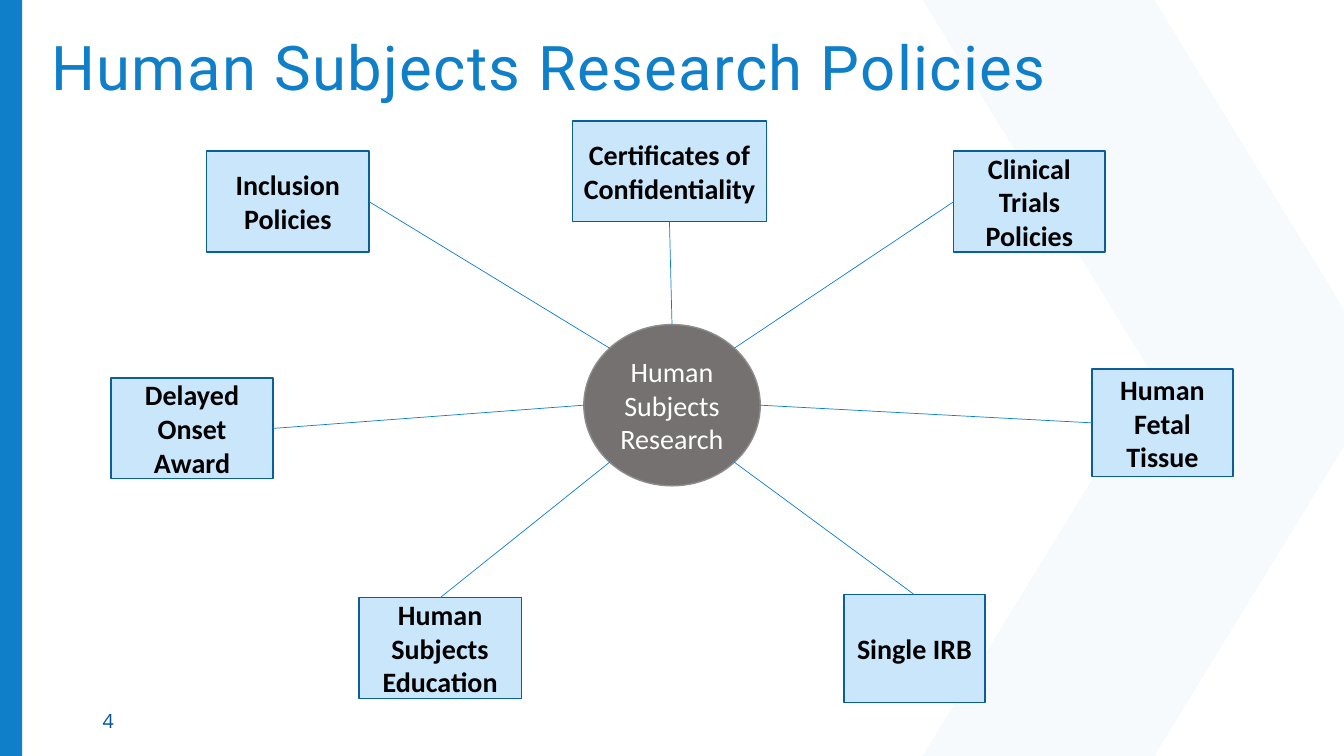
"""Build the Human Subjects Research Policies hub-and-spoke slide."""
from dataclasses import dataclass
from math import cos, pi, sin

from lxml.etree import SubElement
from pptx import Presentation
from pptx.dml.color import RGBColor
from pptx.enum.shapes import MSO_CONNECTOR, MSO_SHAPE
from pptx.enum.text import MSO_ANCHOR, PP_ALIGN
from pptx.oxml.ns import qn
from pptx.util import Inches, Pt


@dataclass(frozen=True)
class Theme:
    accent: str = "0F7FC9"
    spoke: str = "0F7FCD"
    box_fill: str = "C9E6FB"
    box_line: str = "0B5E98"
    hub_fill: str = "767171"
    hub_line: str = "8D8D8D"
    number: str = "015396"
    black: str = "000000"
    white: str = "FFFFFF"
    title_size: int = 44
    body_size: int = 20
    number_size: int = 14


theme = Theme()


def write_text(shape, text, size, font_name, color, bold=False, align=PP_ALIGN.LEFT):
    frame = shape.text_frame
    frame.word_wrap = True
    frame.vertical_anchor = MSO_ANCHOR.MIDDLE
    paragraph = frame.paragraphs[0]
    paragraph.text = text
    paragraph.alignment = align
    paragraph.font.size = Pt(size)
    paragraph.font.name = font_name
    paragraph.font.bold = bold
    paragraph.font.color.rgb = RGBColor.from_string(color)
    return paragraph


def paint(shape, fill, line=None):
    shape.shadow.inherit = False
    shape.fill.solid()
    shape.fill.fore_color.rgb = RGBColor.from_string(fill)
    if line:
        shape.line.color.rgb = RGBColor.from_string(line)
        shape.line.width = Pt(1)
    else:
        shape.line.fill.background()


presentation = Presentation()
presentation.slide_width = Inches(13.33)
presentation.slide_height = Inches(7.5)
slide = presentation.slides.add_slide(presentation.slide_layouts[6])
shapes = slide.shapes

chevron_points = [(11.45, 0), (13.33, 3.07), (13.33, 4.43), (11.45, 7.5), (9.15, 7.5), (11.45, 3.75)]
builder = shapes.build_freeform(Inches(9.15), 0)
builder.add_line_segments([(Inches(x), Inches(y)) for x, y in chevron_points], close=True)
chevron = builder.convert_to_shape()
paint(chevron, theme.accent)
chevron_color = chevron.fill._xPr.find(qn("a:solidFill"))[0]
SubElement(chevron_color, qn("a:alpha"), val="3000")

side_bar = shapes.add_shape(MSO_SHAPE.RECTANGLE, 0, 0, Inches(0.22), Inches(7.5))
paint(side_bar, theme.accent)

slide_number = shapes.add_textbox(Inches(0.92), Inches(6.95), Inches(3), Inches(0.4))
write_text(slide_number, "4", theme.number_size, "Open Sans", theme.number)

title = shapes.add_textbox(Inches(0.41), Inches(0.28), Inches(10.59), Inches(0.84))
title_paragraph = write_text(
    title, "Human Subjects Research Policies", theme.title_size, "Roboto", theme.accent
)
title_paragraph.line_spacing = 0.9
title_paragraph.runs[0]._r.get_or_add_rPr().set("spc", "100")

hub = shapes.add_shape(
    MSO_SHAPE.FLOWCHART_CONNECTOR, Inches(5.79), Inches(3.22), Inches(1.75), Inches(1.6)
)
paint(hub, theme.hub_fill, theme.hub_line)
write_text(
    hub, "Human Subjects Research", theme.body_size, "Calibri", theme.white, align=PP_ALIGN.CENTER
)

TOP, LEFT, BOTTOM, RIGHT = range(4)
policies = [
    ("Human Subjects Education", 3.56, 5.93, 1.61, 1, TOP, 135),
    ("Certificates of Confidentiality", 5.68, 1.2, 1.92, 1, BOTTOM, 270),
    ("Single IRB", 8.37, 5.9, 1.4, 1.07, TOP, 45),
    ("Delayed Onset Award", 1.1, 3.75, 1.61, 1, RIGHT, 180),
    ("Human Fetal Tissue", 10.83, 3.66, 1.4, 1.07, LEFT, 0),
    ("Inclusion Policies", 2.05, 1.5, 1.61, 1, RIGHT, 225),
    ("Clinical Trials Policies", 9.46, 1.5, 1.5, 1, LEFT, 315),
]
for name, left, top, width, height, box_side, hub_angle in policies:
    box = shapes.add_shape(
        MSO_SHAPE.RECTANGLE, Inches(left), Inches(top), Inches(width), Inches(height)
    )
    paint(box, theme.box_fill, theme.box_line)
    write_text(
        box, name, theme.body_size, "Calibri", theme.black, bold=True, align=PP_ALIGN.CENTER
    )

    angle = hub_angle * pi / 180
    hub_x = round(hub.left + hub.width / 2 * (1 + cos(angle)))
    hub_y = round(hub.top + hub.height / 2 * (1 + sin(angle)))
    spoke = shapes.add_connector(MSO_CONNECTOR.STRAIGHT, box.left, box.top, hub_x, hub_y)
    spoke.begin_connect(box, box_side)
    spoke.line.color.rgb = RGBColor.from_string(theme.spoke)
    spoke.line.width = Pt(0.5)
    SubElement(spoke._element.spPr, qn("a:effectLst"))

presentation.save("out.pptx")
